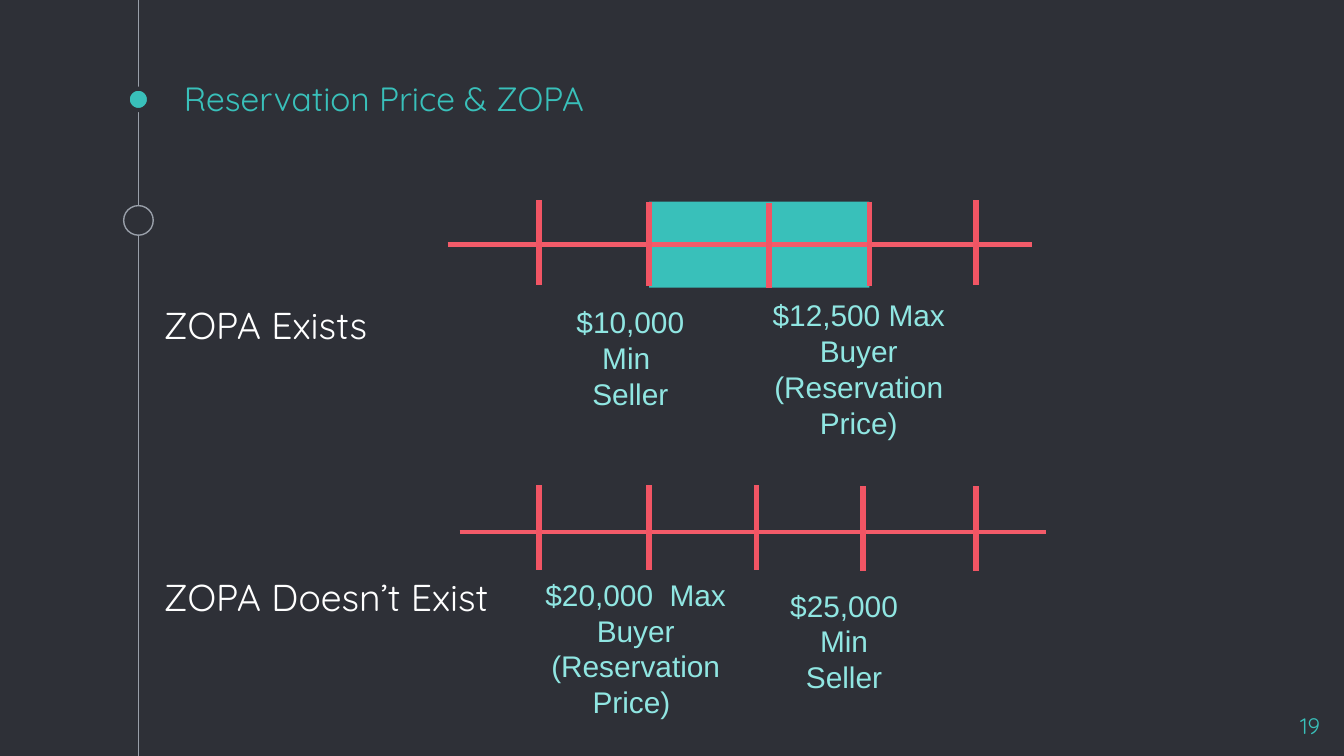
from lxml import etree
from pptx import Presentation
from pptx.dml.color import RGBColor
from pptx.enum.shapes import MSO_CONNECTOR, MSO_SHAPE
from pptx.enum.text import MSO_ANCHOR, PP_ALIGN
from pptx.oxml.ns import qn
from pptx.util import Inches, Pt

STRAIGHT = MSO_CONNECTOR.STRAIGHT
OVAL, RECTANGLE = MSO_SHAPE.OVAL, MSO_SHAPE.RECTANGLE
TOP, BOTTOM = MSO_ANCHOR.TOP, MSO_ANCHOR.BOTTOM
LEFT, CENTER, RIGHT = PP_ALIGN.LEFT, PP_ALIGN.CENTER, PP_ALIGN.RIGHT

WIDTH = 10
HEIGHT = WIDTH * 9 / 16
DARK, TEAL, PALE, WHITE = "2E3037", "39C0BA", "90E6E2", "FFFFFF"
GREY, AXIS_RED, TICK_RED = "999FA9", "F35B69", "F15564"
RAIL_X, TICK_HEIGHT = 1.03, 0.63

TITLE = "Reservation Price & ZOPA"
PAGE = "19"
SCALES = [
    {
        "heading": ("ZOPA Exists", 2.15, 0.59),
        "axis": (3.33, 1.82, 4.35),
        "ticks": [(4.01, 1.49), (4.83, 1.5), (5.72, 1.51), (6.47, 1.5), (7.26, 1.49)],
        "zone": (4.83, 6.47),
        "prices": [
            (["$10,000 Min ", "Seller"], (4.13, 2.21, 1.12, 0.91)),
            (["$12,500 Max", "Buyer (Reservation Price)"], (5.56, 2.16, 1.66, 1.18)),
        ],
    },
    {
        "heading": ("ZOPA Doesn’t Exist", 4.17, 0.47),
        "axis": (3.42, 3.96, 4.36),
        "ticks": [(4.01, 3.61), (4.83, 3.61), (5.63, 3.61), (6.42, 3.62), (7.26, 3.62)],
        "zone": None,
        "prices": [
            (["$20,000  Max Buyer (Reservation Price) "], (3.95, 4.24, 1.56, 1.18)),
            (["$25,000 Min Seller"], (5.72, 4.32, 1.12, 0.91)),
        ],
    },
]


def rgb(value):
    return RGBColor.from_string(value)


def add_line(slide, x1, y1, x2, y2, color, weight):
    line = slide.shapes.add_connector(STRAIGHT, *map(Inches, (x1, y1, x2, y2)))
    line.line.color.rgb = rgb(color)
    line.line.width = Pt(weight)
    etree.SubElement(line._element.spPr, qn("a:effectLst"))


def add_block(slide, kind, box, fill, outline=None, weight=0):
    block = slide.shapes.add_shape(kind, *map(Inches, box))
    block.shadow.inherit = False
    block.fill.solid()
    block.fill.fore_color.rgb = rgb(fill)
    if outline:
        block.line.color.rgb = rgb(outline)
        block.line.width = Pt(weight)
    else:
        block.line.fill.background()


def add_text(slide, paragraphs, box, size, color, font="Quicksand", align=LEFT,
             anchor=TOP, inset=0.1, indent=0, before=0):
    frame = slide.shapes.add_textbox(*map(Inches, box)).text_frame
    frame.word_wrap = True
    frame.vertical_anchor = anchor
    frame.margin_top = frame.margin_bottom = Inches(inset)
    frame.text = "\n".join(paragraphs)
    for paragraph in frame.paragraphs:
        paragraph.alignment = align
        paragraph.space_before = Pt(before)
        paragraph._p.get_or_add_pPr().set("marL", str(Inches(indent)))
        for run in paragraph.runs:
            run.font.name = font
            run.font.size = Pt(size)
            run.font.color.rgb = rgb(color)


def add_circle(slide, center_y, diameter, fill, outline, weight):
    box = (RAIL_X - diameter / 2, center_y - diameter / 2, diameter, diameter)
    add_block(slide, OVAL, box, fill, outline, weight)


def add_scale(slide, scale):
    heading, heading_top, heading_height = scale["heading"]
    add_text(slide, [heading], (1.01, heading_top, 3.13, heading_height), 20, WHITE,
             indent=0.11, before=6)
    if scale["zone"]:
        start, end = scale["zone"]
        add_block(slide, RECTANGLE, (start, 1.5, end - start, 0.64), TEAL)
    for paragraphs, box in scale["prices"]:
        add_text(slide, paragraphs, box, 16, PALE, font="Arial", align=CENTER, inset=0.05)
    left, y, length = scale["axis"]
    add_line(slide, left, y, left + length, y, AXIS_RED, 2.25)
    for x, top in scale["ticks"]:
        add_line(slide, x, top, x, top + TICK_HEIGHT, TICK_RED, 3)


def main():
    deck = Presentation()
    deck.slide_width, deck.slide_height = Inches(WIDTH), Inches(HEIGHT)
    slide = deck.slides.add_slide(deck.slide_layouts[6])
    slide.background.fill.solid()
    slide.background.fill.fore_color.rgb = rgb(DARK)

    add_line(slide, RAIL_X, 0, RAIL_X, HEIGHT, GREY, 0.75)
    add_circle(slide, 0.74, 0.16, TEAL, DARK, 2.25)
    add_circle(slide, 1.64, 0.22, DARK, GREY, 0.75)
    add_text(slide, [TITLE], (1.27, 0.6, 7.5, 0.38), 18, TEAL, anchor=BOTTOM)
    add_text(slide, [PAGE], (9.32, 5.2, 0.6, 0.34), 12, TEAL, align=RIGHT)
    for scale in SCALES:
        add_scale(slide, scale)
    deck.save("out.pptx")


if __name__ == "__main__":
    main()
